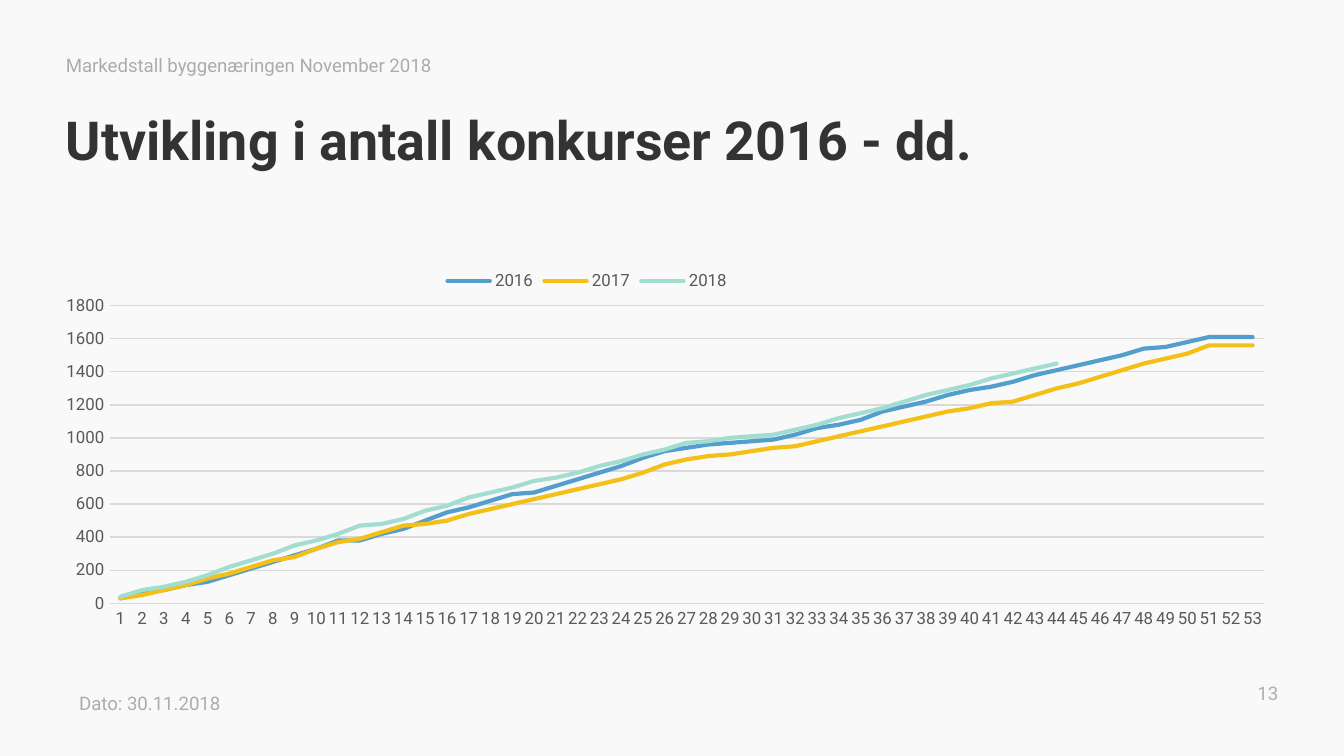
"""Build the slide on cumulative bankruptcies per week, 2016 to 2018."""
from lxml import etree
from pptx import Presentation
from pptx.chart.data import CategoryChartData
from pptx.dml.color import RGBColor
from pptx.enum.chart import XL_CHART_TYPE as ChartType, XL_LEGEND_POSITION as LegendPos, XL_TICK_MARK as Tick
from pptx.enum.text import MSO_ANCHOR as Anchor, PP_ALIGN as Align
from pptx.oxml.ns import qn
from pptx.util import Inches, Pt

FONT = "Roboto"
LEFT, WIDTH = 0.49, 9.02


def paint(color_format, hex_color):
    color_format.rgb = RGBColor.from_string(hex_color)


def write(shape, text, box, size=10, color="AFABAB", bold=False, align=Align.LEFT, spacing=1.0, inset=(0, 0)):
    shape.left, shape.top, shape.width, shape.height = map(Inches, box)
    frame = shape.text_frame
    frame.word_wrap = True
    frame.vertical_anchor = Anchor.TOP
    frame.margin_left = frame.margin_right = Inches(inset[0])
    frame.margin_top = frame.margin_bottom = Inches(inset[1])
    frame.text = text
    paragraph = frame.paragraphs[0]
    paragraph.alignment = align
    paragraph.line_spacing = spacing
    paragraph.space_before = Pt(0)
    font = paragraph.runs[0].font
    font.name, font.size, font.bold = FONT, Pt(size), bold
    paint(font.color, color)


deck = Presentation()
deck.slide_width, deck.slide_height = Inches(10), Inches(10 * 9 / 16)
slide = deck.slides.add_slide(deck.slide_layouts[5])
slide.background.fill.solid()
paint(slide.background.fill.fore_color, "F9F9F9")

write(slide.shapes.title, "Utvikling i antall konkurser 2016 - dd.", (LEFT, 0.85, WIDTH, 0.51),
      size=28.8, color="333333", bold=True, spacing=0.9)

small_texts = [
    ("13", (8.92, 5.07, 0.59, 0.3), dict(color="AFAFAF", align=Align.RIGHT)),
    ("Markedstall byggenæringen November 2018", (LEFT, 0.38, 6.5, 0.3), dict(spacing=1.14)),
    ("Dato: 30.11.2018", (LEFT, 5.1, 2.15, 0.27), dict(inset=(0.1, 0.05))),
]
for text, box, style in small_texts:
    write(slide.shapes.add_textbox(*map(Inches, box)), text, box, **style)

bankruptcies = {
    "2016": ("539ECC", [
        30, 60, 80, 110, 130, 170, 210, 250, 290, 330, 380, 380, 420, 450, 500, 550, 580, 620,
        660, 670, 710, 750, 790, 830, 880, 920, 940, 960, 970, 980, 990, 1020, 1060, 1080, 1110,
        1160, 1190, 1220, 1260, 1290, 1310, 1340, 1380, 1410, 1440, 1470, 1500, 1540, 1550, 1580,
        1610, 1610, 1610]),
    "2017": ("F4C017", [
        30, 50, 80, 110, 150, 180, 220, 260, 280, 330, 370, 390, 430, 470, 480, 500, 540, 570,
        600, 630, 660, 690, 720, 750, 790, 840, 870, 890, 900, 920, 940, 950, 980, 1010, 1040,
        1070, 1100, 1130, 1160, 1180, 1210, 1220, 1260, 1300, 1330, 1370, 1410, 1450, 1480, 1510,
        1560, 1560, 1560]),
    "2018": ("A2DDD1", [
        40, 80, 100, 130, 170, 220, 260, 300, 350, 380, 420, 470, 480, 510, 560, 590, 640, 670,
        700, 740, 760, 790, 830, 860, 900, 930, 970, 980, 1000, 1010, 1020, 1050, 1080, 1120, 1150,
        1180, 1220, 1260, 1290, 1320, 1360, 1390, 1420, 1450] + [None] * 9),
}
weekly_data = CategoryChartData()
weekly_data.categories = [str(week) for week in range(1, 54)]
for year, (color, totals) in bankruptcies.items():
    weekly_data.add_series(year, totals)
chart = slide.shapes.add_chart(
    ChartType.LINE, Inches(LEFT), Inches(1.59), Inches(WIDTH), Inches(3.23), weekly_data).chart
chart.has_title = False
chart.font.name, chart.font.size = FONT, Pt(10)
paint(chart.font.color, "000000")

for series in chart.plots[0].series:
    series.smooth = False
    series.format.line.width = Pt(2.25)
    paint(series.format.line.color, bankruptcies[series.name][0])
    series.format.line._ln.set("cap", "rnd")

weeks, totals_axis = chart.category_axis, chart.value_axis
totals_axis.minimum_scale, totals_axis.maximum_scale, totals_axis.major_unit = 0, 1800, 200
totals_axis.has_major_gridlines = True
totals_axis.format.line.fill.background()
for rule in (weeks.format.line, totals_axis.major_gridlines.format.line):
    rule.width = Pt(0.75)
    paint(rule.color, "D9D9D9")

chart.has_legend = True
legend = chart.legend
legend.position = LegendPos.BOTTOM
legend.include_in_layout = False
for axis in (weeks, totals_axis):
    axis.major_tick_mark = axis.minor_tick_mark = Tick.NONE
for font in (weeks.tick_labels.font, totals_axis.tick_labels.font, legend.font):
    font.name, font.size = FONT, Pt(9)
    paint(font.color, "595959")

plot_area = chart._chartSpace.chart.plotArea
layouts = [
    (plot_area, 0, "inner", (0.036, 0.212, 0.952, 0.686)),
    (legend._element, 1, None, (0.31, 0.12, 0.24, 0.07)),
]
for parent, position, target, fractions in layouts:
    for old_layout in parent.findall(qn("c:layout")):
        parent.remove(old_layout)
    layout = etree.Element(qn("c:layout"))
    parent.insert(position, layout)
    manual = etree.SubElement(layout, qn("c:manualLayout"))
    settings = [("layoutTarget", target)] if target else []
    settings += [("xMode", "edge"), ("yMode", "edge"), *zip("xywh", fractions)]
    for tag, value in settings:
        etree.SubElement(manual, qn("c:" + tag)).set("val", str(value))

deck.save("out.pptx")
